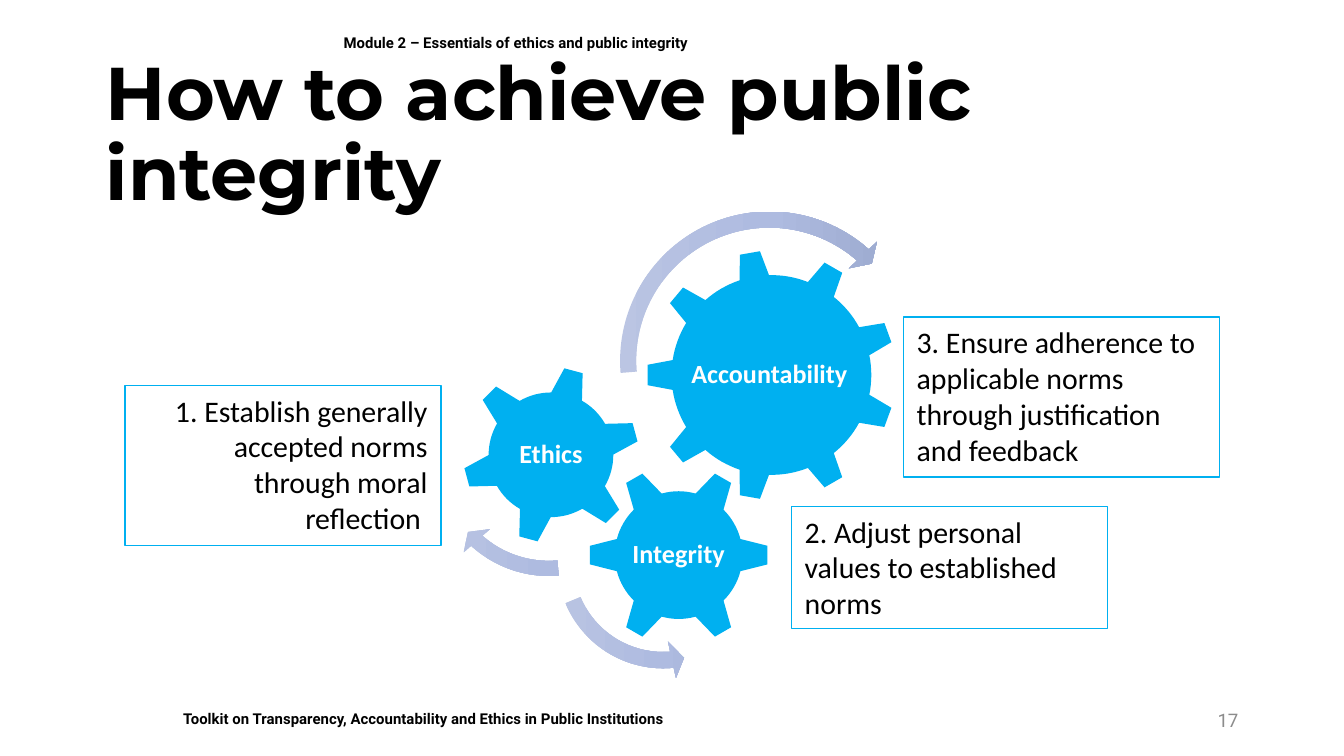
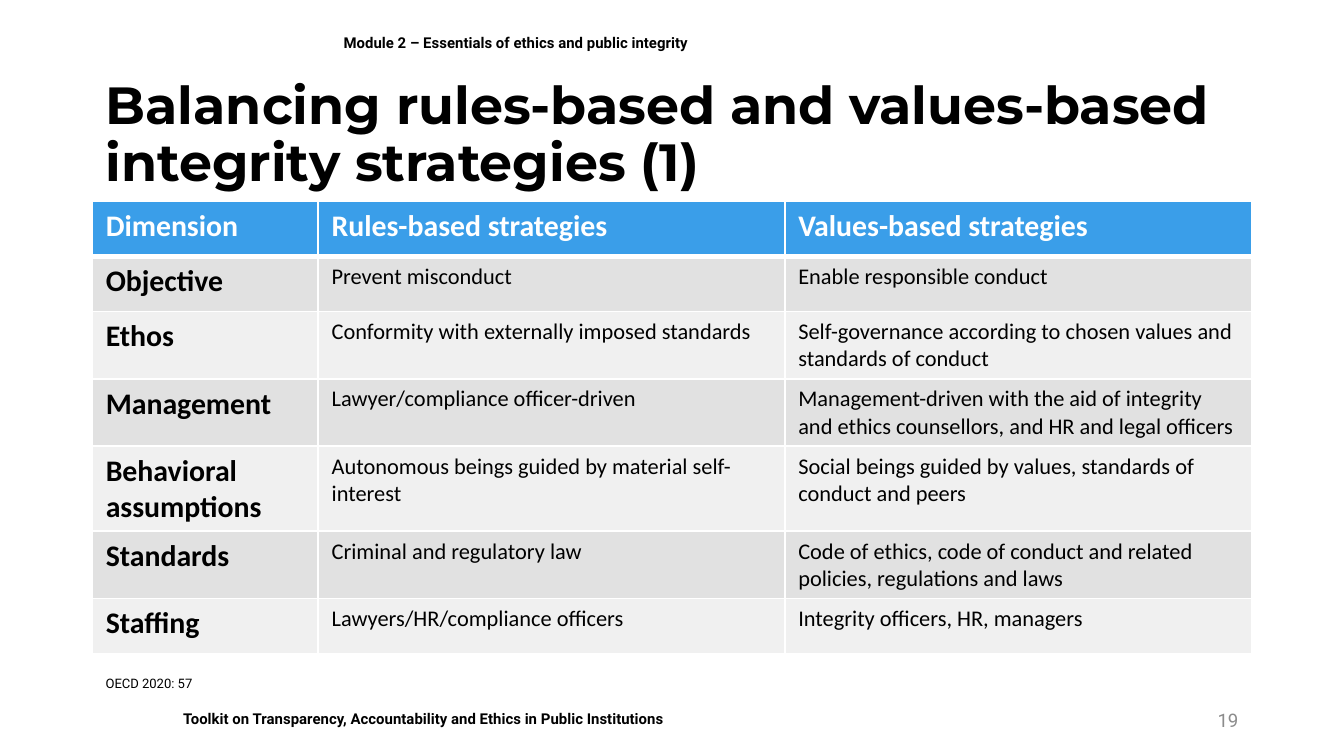
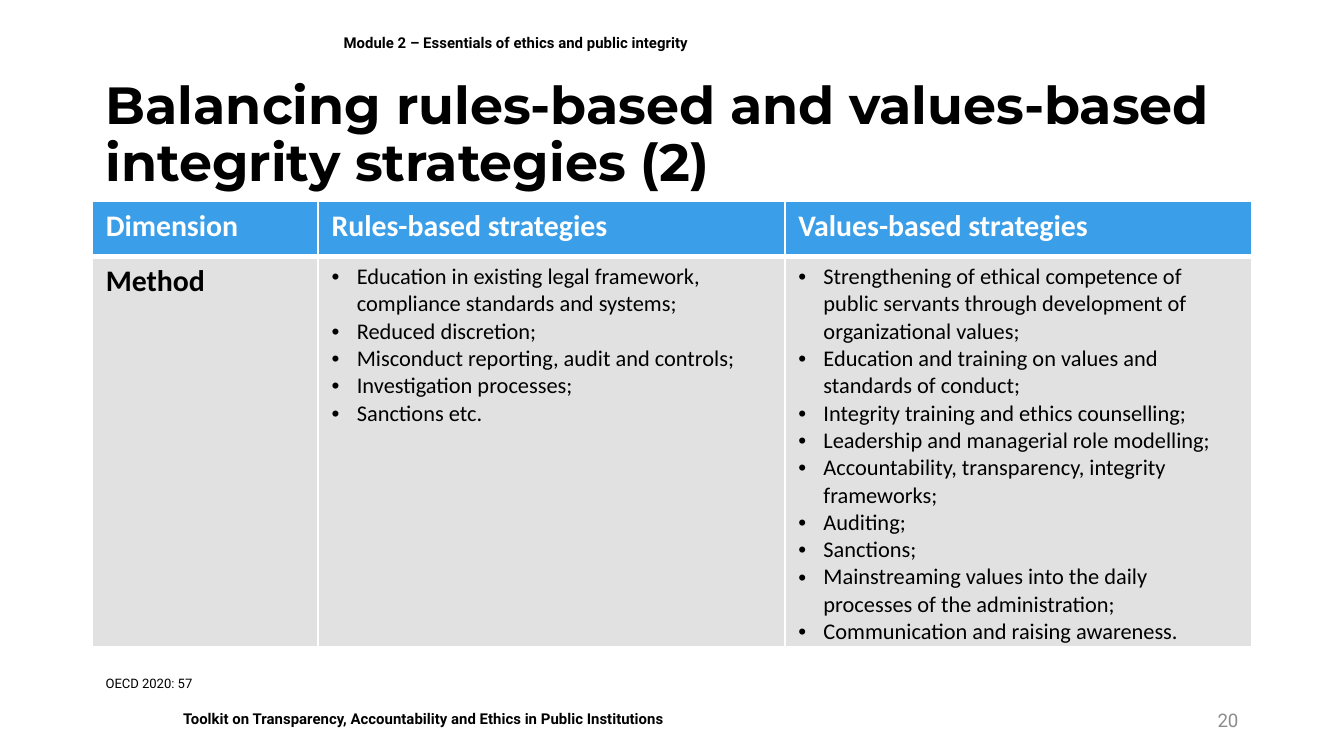
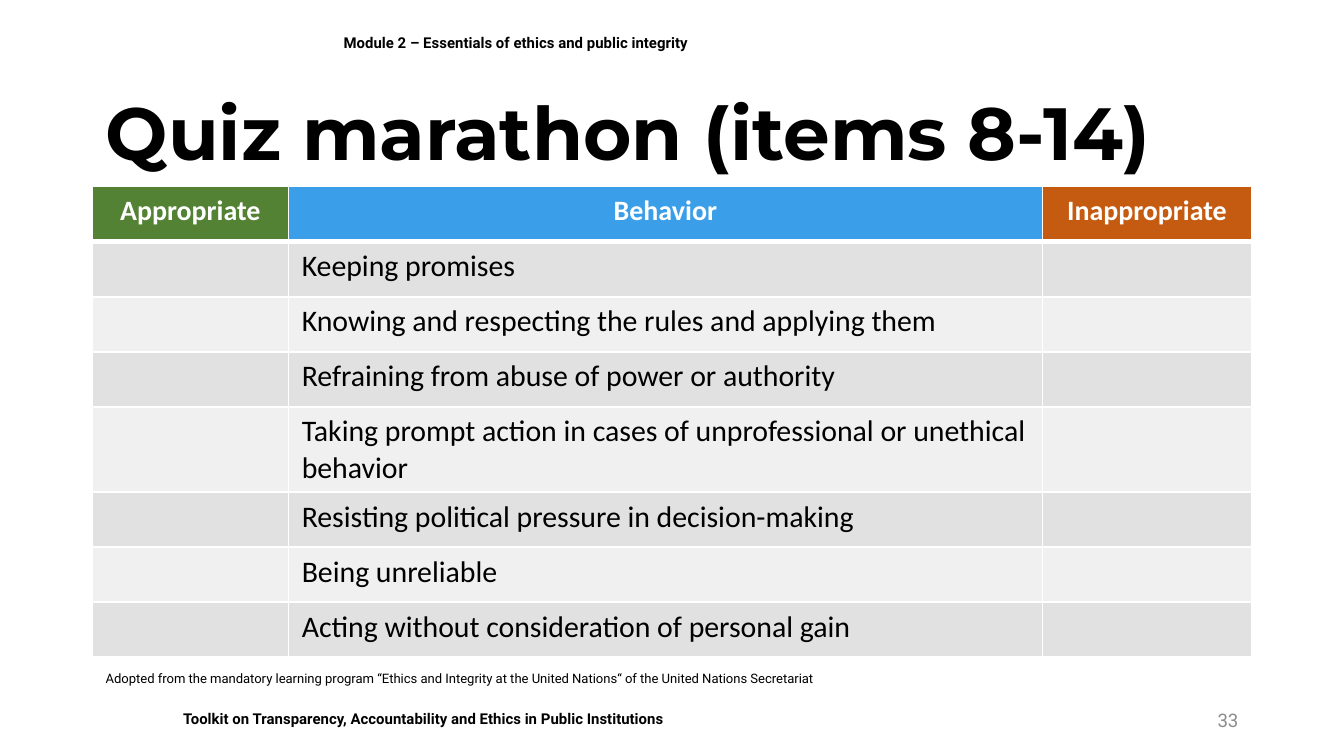
from copy import deepcopy
from math import cos, radians, sin

from lxml.etree import SubElement
from pptx import Presentation
from pptx.dml.color import RGBColor
from pptx.enum.shapes import MSO_SHAPE as Preset
from pptx.enum.text import MSO_ANCHOR as Anchor, MSO_AUTO_SIZE as AutoSize, PP_ALIGN as Align
from pptx.oxml.ns import qn
from pptx.util import Pt

LEFT, WIDTH = 49.5, 621
BLACK, WHITE, GREY = "000000", "FFFFFF", "8C8C8C"
CYAN, BLUE, GREEN, ORANGE = "00B0F0", "3A9EE9", "548235", "C55A11"
BANDS = ("E1E1E1", "F0F0F0")
ARROW_STOPS = ((0, "BBC5E3"), (0.5, "AEBBE0"), (1, "97A5CA"))

TITLE = {"name": "Montserrat", "size": 40, "bold": True, "color": BLACK}
LABEL = {"name": "Roboto", "size": 8, "bold": True, "color": BLACK}
NUMBER = {"name": "Roboto", "size": 10, "bold": False, "color": GREY}
SOURCE = {"name": "Roboto", "size": 7, "bold": False, "color": BLACK}
BODY = {"name": "Calibri", "size": 16, "bold": False, "color": BLACK}
DETAIL = {**BODY, "size": 12}
ROW_HEAD = {**BODY, "bold": True}
HEADER = {**ROW_HEAD, "color": WHITE}
QUIZ_HEADER = {**HEADER, "size": 15}
GEAR = {**HEADER, "size": 14}

MODULE_NAME = "Module 2 – Essentials of ethics and public integrity"
TOOLKIT_NAME = "Toolkit on Transparency, Accountability and Ethics in Public Institutions"
STRATEGY_COLUMNS = (121, 250, 250)
STRATEGY_HEADER = ["Dimension", "Rules-based strategies", "Values-based strategies"]
STRATEGIES = [
    ["Objective", "Prevent misconduct", "Enable responsible conduct"],
    ["Ethos", "Conformity with externally imposed standards",
     "Self-governance according to chosen values and standards of conduct"],
    ["Management", "Lawyer/compliance officer-driven",
     "Management-driven with the aid of integrity and ethics counsellors, and HR and legal officers"],
    ["Behavioral assumptions", "Autonomous beings guided by material self-interest",
     "Social beings guided by values, standards of conduct and peers"],
    ["Standards", "Criminal and regulatory law",
     "Code of ethics, code of conduct and related policies, regulations and laws"],
    ["Staffing", "Lawyers/HR/compliance officers", "Integrity officers, HR, managers"],
]
METHODS = ["Method", [
    "Education in existing legal framework, compliance standards and systems;",
    "Reduced discretion;",
    "Misconduct reporting, audit and controls;",
    "Investigation processes;",
    "Sanctions etc.",
], [
    "Strengthening of ethical competence of public servants through development of organizational values;",
    "Education and training on values and standards of conduct;",
    "Integrity training and ethics counselling;",
    "Leadership and managerial role modelling;",
    "Accountability, transparency, integrity frameworks;",
    "Auditing;",
    "Sanctions;",
    "Mainstreaming values into the daily processes of the administration;",
    "Communication and raising awareness.",
]]
BEHAVIORS = [
    "Keeping promises",
    "Knowing and respecting the rules and applying them",
    "Refraining from abuse of power or authority",
    "Taking prompt action in cases of unprofessional or unethical behavior",
    "Resisting political pressure in decision-making",
    "Being unreliable",
    "Acting without consideration of personal gain",
]


def rgb(value):
    """Turn a hex string into a colour."""
    return RGBColor.from_string(value)


def points(*values):
    """Turn numbers of points into lengths."""
    return [Pt(value) for value in values]


class Deck:
    """Holds the presentation, its style and the current slide."""

    def __init__(self):
        """Start an empty presentation."""
        self.presentation = Presentation()
        self.presentation.slide_width, self.presentation.slide_height = points(720, 405)
        self.slide = None

    def add_text(self, paragraph, text, style, **settings):
        """Add one formatted run to a paragraph."""
        for name, value in settings.items():
            setattr(paragraph, name, value)
        run = paragraph.add_run()
        run.text = text
        for name, value in style.items():
            if name == "color":
                run.font.color.rgb = rgb(value)
            else:
                setattr(run.font, name, Pt(value) if name == "size" else value)

    def add_slide(self, title, number, size=40):
        """Add a slide with its title, labels and number."""
        layout = self.presentation.slide_layouts[5]
        self.slide = self.presentation.slides.add_slide(layout)
        self.text_box((91, 376.5, 516, 17), TOOLKIT_NAME, LABEL, anchor=Anchor.TOP, fill=WHITE)
        self.text_box((177, 7, 493.5, 31.5), MODULE_NAME, LABEL)
        self.text_box((508.5, 375, 162, 21.5), number, NUMBER, align=Align.RIGHT)
        shape = self.slide.shapes.title
        shape.left, shape.top, shape.width, shape.height = points(LEFT, 46, WIDTH, 54)
        frame = shape.text_frame
        frame.auto_size, frame.vertical_anchor = AutoSize.NONE, Anchor.MIDDLE
        self.add_text(frame.paragraphs[0], title, {**TITLE, "size": size},
                      alignment=Align.LEFT, line_spacing=0.9)

    def text_box(self, box, text, style, align=Align.LEFT, anchor=Anchor.MIDDLE, fill=None):
        """Add a wrapped text box."""
        shape = self.slide.shapes.add_textbox(*points(*box))
        if fill:
            shape.fill.solid()
            shape.fill.fore_color.rgb = rgb(fill)
        frame = shape.text_frame
        frame.word_wrap, frame.vertical_anchor = True, anchor
        self.add_text(frame.paragraphs[0], text, style, alignment=align)

    def source_line(self, top, text):
        """Add the source line under a table."""
        self.text_box((LEFT, top, 398, 16), text, SOURCE, anchor=Anchor.TOP)

    def note(self, box, text, align=Align.LEFT):
        """Add an outlined note."""
        shape = self.slide.shapes.add_shape(Preset.RECTANGLE, *points(*box))
        shape.shadow.inherit = False
        shape.fill.background()
        shape.line.color.rgb, shape.line.width = rgb(CYAN), Pt(0.75)
        frame = shape.text_frame
        frame.word_wrap, frame.vertical_anchor = True, Anchor.TOP
        self.add_text(frame.paragraphs[0], text, BODY, alignment=align)

    def gear(self, text, center, teeth, turn, radii, tip, base):
        """Add a gear whose teeth have the given half angles at tip and base."""
        inner, outer = radii
        pitch = 360 / teeth
        corners = []
        for tooth in range(teeth):
            middle = turn + tooth * pitch
            gap = pitch - 2 * base
            corners += [(outer, middle - tip), (outer, middle + tip)]
            corners += [(inner, middle + base + gap * step / 8) for step in range(9)]
        outline = [points(center[0] + radius * cos(radians(angle)),
                          center[1] + radius * sin(radians(angle))) for radius, angle in corners]
        builder = self.slide.shapes.build_freeform(*outline[0])
        builder.add_line_segments(outline[1:], close=True)
        shape = builder.convert_to_shape()
        shape.shadow.inherit = False
        shape.fill.solid()
        shape.fill.fore_color.rgb = rgb(CYAN)
        shape.line.fill.background()
        frame = shape.text_frame
        frame.word_wrap, frame.vertical_anchor = False, Anchor.MIDDLE
        self.add_text(frame.paragraphs[0], text, GEAR, alignment=Align.CENTER, line_spacing=0.9)

    def turning_arrow(self, preset, left, top, size, adjustments):
        """Add a curved arrow with a three-stop gradient."""
        shape = self.slide.shapes.add_shape(preset, *points(left, top, size, size))
        shape.rotation = 270
        shape.shadow.inherit = False
        shape.line.fill.background()
        for index, value in enumerate(adjustments):
            shape.adjustments[index] = value
        shape.fill.gradient()
        shape.fill.gradient_angle = 270
        stop_list = next(shape.element.iter(qn("a:gsLst")))
        stop_list.append(deepcopy(stop_list[0]))
        for stop, (position, color) in zip(shape.fill.gradient_stops, ARROW_STOPS):
            stop.position, stop.color.rgb = position, rgb(color)

    def bullet(self, paragraph):
        """Give a paragraph a hanging bullet."""
        properties = paragraph._p.get_or_add_pPr()
        properties.set("marL", str(Pt(13.5)))
        properties.set("indent", str(Pt(-13.5)))
        SubElement(properties, qn("a:buFont"), typeface="Arial")
        SubElement(properties, qn("a:buChar"), char="•")

    def border(self, cell, side, width):
        """Draw one white cell border."""
        properties = cell._tc.get_or_add_tcPr()
        line = SubElement(properties, qn(f"a:ln{side}"), w=str(Pt(width)))
        fill = SubElement(line, qn("a:solidFill"))
        SubElement(fill, qn("a:srgbClr"), val=WHITE)

    def table(self, top, columns, rows, styles, header_style=HEADER,
              header_fills=(BLUE,) * 3, header_align=Align.LEFT):
        """Add a banded table with a header row."""
        row_height = 29.5
        frame = self.slide.shapes.add_table(
            len(rows), len(columns), *points(LEFT, top, WIDTH, row_height * len(rows)))
        table = frame.table
        for column, width in zip(table.columns, columns):
            column.width = Pt(width)
        for row, values in enumerate(rows):
            table.rows[row].height = Pt(row_height)
            for column, value in enumerate(values):
                cell = table.cell(row, column)
                for side in "LRTB":
                    self.border(cell, side, 3 if (row, side) in ((0, "B"), (1, "T")) else 1)
                cell.fill.solid()
                fill = BANDS[(row - 1) % 2] if row else header_fills[column]
                cell.fill.fore_color.rgb = rgb(fill)
                self.fill_cell(cell, value, styles[column] if row else header_style,
                               Align.LEFT if row else header_align)

    def fill_cell(self, cell, value, style, align):
        """Put a text or a bulleted list into a cell."""
        bulleted = isinstance(value, list)
        for index, text in enumerate(value if bulleted else [value]):
            frame = cell.text_frame
            paragraph = frame.add_paragraph() if index else frame.paragraphs[0]
            if bulleted:
                self.bullet(paragraph)
            if text:
                self.add_text(paragraph, text, style, alignment=align)


def add_integrity_slide(deck):
    """Build the slide with the three gears."""
    deck.add_slide("How to achieve public integrity", "17")
    deck.gear("Accountability", (413.3, 200.9), 9, 180, (53.5, 66.6), 4.7, 8.6)
    deck.gear("Integrity", (363.6, 297.4), 6, 0, (34.2, 47.8), 6, 14.6)
    deck.gear("Ethics", (295.2, 243.7), 6, -15, (33.4, 46.9), 6.2, 14.8)
    deck.turning_arrow(Preset.CIRCULAR_ARROW, 326.2, 107.3, 172, (0.05, 2.99, 24.89, 159.21, 0.06))
    deck.turning_arrow(Preset.LEFT_CIRCULAR_ARROW, 293, 239, 124.6, (0.07, 4.3, 104.89, 148.38, 0.08))
    deck.turning_arrow(Preset.CIRCULAR_ARROW, 226.8, 179.3, 134.6, (0.06, 3.94, 133.14, 105.08, 0.07))
    deck.note((424, 271.4, 169.2, 65.5), "2. Adjust personal values to established norms")
    deck.note((484, 169.9, 169.2, 85.7),
              "3. Ensure adherence to applicable norms through justification and feedback")
    deck.note((67, 206.6, 169.2, 85.7),
              "1. Establish generally accepted norms through moral reflection ", Align.RIGHT)


def add_strategy_slide(deck, part, number, rows):
    """Build one part of the strategy comparison."""
    deck.add_slide(f"Balancing rules-based and values-based integrity strategies ({part})", number, 28)
    deck.table(108, STRATEGY_COLUMNS, [STRATEGY_HEADER, *rows], (ROW_HEAD, DETAIL, DETAIL))
    deck.source_line(358.5, "OECD 2020: 57")


def add_quiz_slide(deck):
    """Build the quiz slide."""
    deck.add_slide("Quiz marathon (items 8-14)", "33", 39.6)
    rows = [["Appropriate", "Behavior", "Inappropriate"]]
    rows += [["", behavior, ""] for behavior in BEHAVIORS]
    deck.table(100, (105, 404, 112), rows, (BODY,) * 3, QUIZ_HEADER,
               (GREEN, BLUE, ORANGE), Align.CENTER)
    deck.source_line(355.7, "Adopted from the mandatory learning program “Ethics and Integrity at the "
                            "United Nations“ of the United Nations Secretariat")


def main():
    """Build and save the presentation."""
    deck = Deck()
    add_integrity_slide(deck)
    add_strategy_slide(deck, 1, "19", STRATEGIES)
    add_strategy_slide(deck, 2, "20", [METHODS])
    add_quiz_slide(deck)
    deck.presentation.save("out.pptx")


if __name__ == "__main__":
    main()
